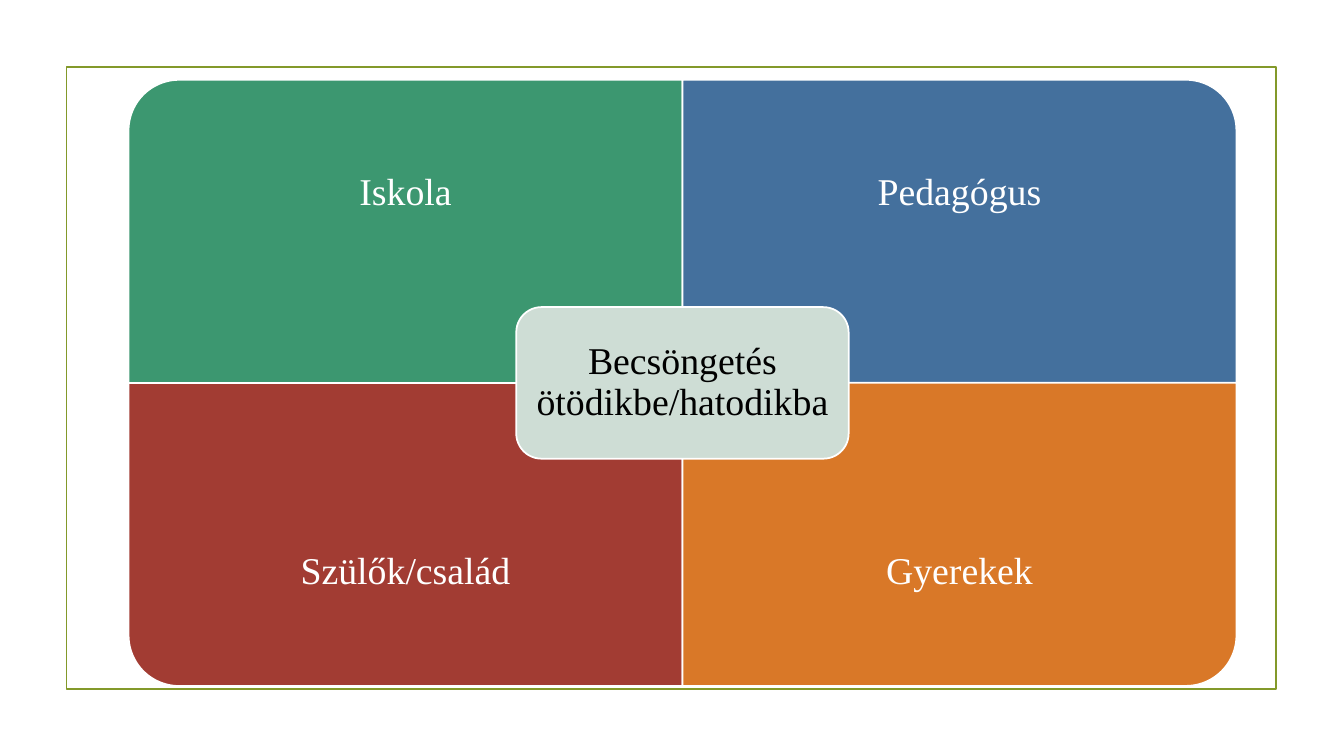
"""Build a four-quadrant slide around a central theme."""
from pptx import Presentation
from pptx import util as u
from pptx.dml.color import RGBColor
from pptx.enum import shapes, text

OLIVE = RGBColor(0x83, 0x99, 0x2A)
GREEN = RGBColor(0x3C, 0x97, 0x70)
BLUE = RGBColor(0x44, 0x70, 0x9D)
RED = RGBColor(0xA2, 0x3C, 0x33)
ORANGE = RGBColor(0xD9, 0x78, 0x28)
PALE = RGBColor(0xCE, 0xDD, 0xD5)
WHITE = RGBColor(0xFF, 0xFF, 0xFF)
BLACK = RGBColor(0, 0, 0)

deck = Presentation()
deck.slide_width, deck.slide_height = u.Pt(960), u.Pt(540)
page = deck.slides.add_slide(deck.slide_layouts[6])


def add_label(words, *, left, top, width, height, inset, color):
    box = page.shapes.add_textbox(u.Pt(left), u.Pt(top), u.Pt(width), u.Pt(height))
    frame = box.text_frame
    frame.word_wrap = True
    frame.vertical_anchor = text.MSO_ANCHOR.MIDDLE
    frame.margin_left = frame.margin_right = u.Pt(inset)
    frame.margin_top = frame.margin_bottom = u.Pt(inset)
    para = frame.paragraphs[0]
    para.alignment = text.PP_ALIGN.CENTER
    para.line_spacing = 0.9
    span = para.add_run()
    span.text = words
    span.font.size = u.Pt(27)
    span.font.name = "Times New Roman"
    span.font.color.rgb = color


def add_panel(kind, left, top, width, height, fill, line):
    panel = page.shapes.add_shape(kind, u.Pt(left), u.Pt(top), u.Pt(width), u.Pt(height))
    panel.shadow.inherit = False
    if fill is None:
        panel.fill.background()
    else:
        panel.fill.solid()
        panel.fill.fore_color.rgb = fill
    panel.line.color.rgb = line
    panel.line.width = u.Pt(1.25)
    return panel


add_panel(shapes.MSO_SHAPE.RECTANGLE, 47.5, 48, 864, 444.4, None, OLIVE)

MID_X, MID_Y = 487.5, 273.5
WIDE, HIGH = 395.7, 216.5
quadrants = [
    ("Iskola", 0, 0, 270, GREEN),
    ("Pedagógus", 1, 0, 0, BLUE),
    ("Szülők/család", 0, 1, 180, RED),
    ("Gyerekek", 1, 1, 90, ORANGE),
]
for words, column, row, angle, fill in quadrants:
    left = MID_X + (column - 1) * WIDE
    top = MID_Y + (row - 1) * HIGH
    width, height = (HIGH, WIDE) if angle % 180 else (WIDE, HIGH)
    panel = add_panel(shapes.MSO_SHAPE.ROUND_1_RECTANGLE,
                      left + (WIDE - width) / 2, top + (HIGH - height) / 2,
                      width, height, fill, WHITE)
    panel.rotation = angle
    add_label(words, left=left, top=top + row * HIGH / 4, width=WIDE,
              height=HIGH * 3 / 4, inset=15, color=WHITE)

CORE_W, CORE_H, EDGE = WIDE * 0.6, HIGH / 2, 5.3
add_panel(shapes.MSO_SHAPE.ROUNDED_RECTANGLE, MID_X - CORE_W / 2, MID_Y - CORE_H / 2,
          CORE_W, CORE_H, PALE, WHITE)
add_label("Becsöngetés ötödikbe/hatodikba", left=MID_X - CORE_W / 2 + EDGE,
          top=MID_Y - CORE_H / 2 + EDGE, width=CORE_W - 2 * EDGE,
          height=CORE_H - 2 * EDGE, inset=7.5, color=BLACK)

deck.save("out.pptx")
